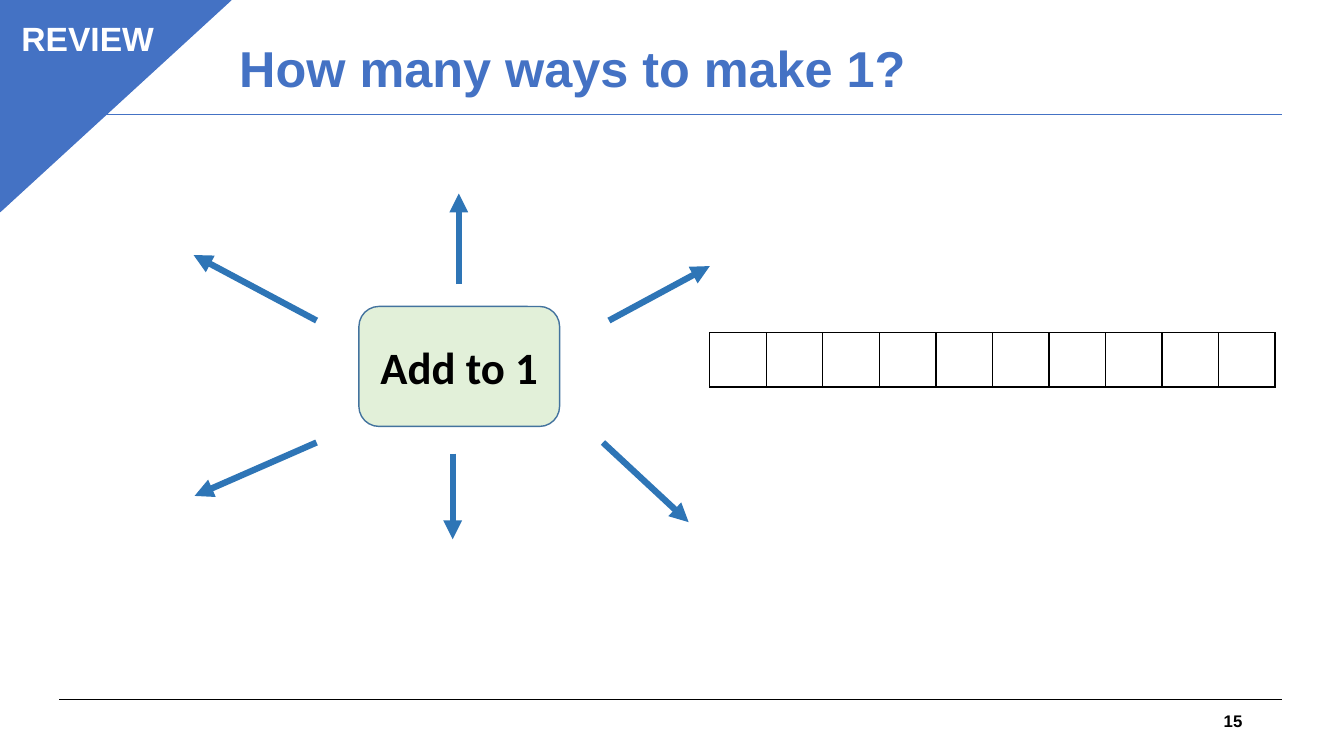
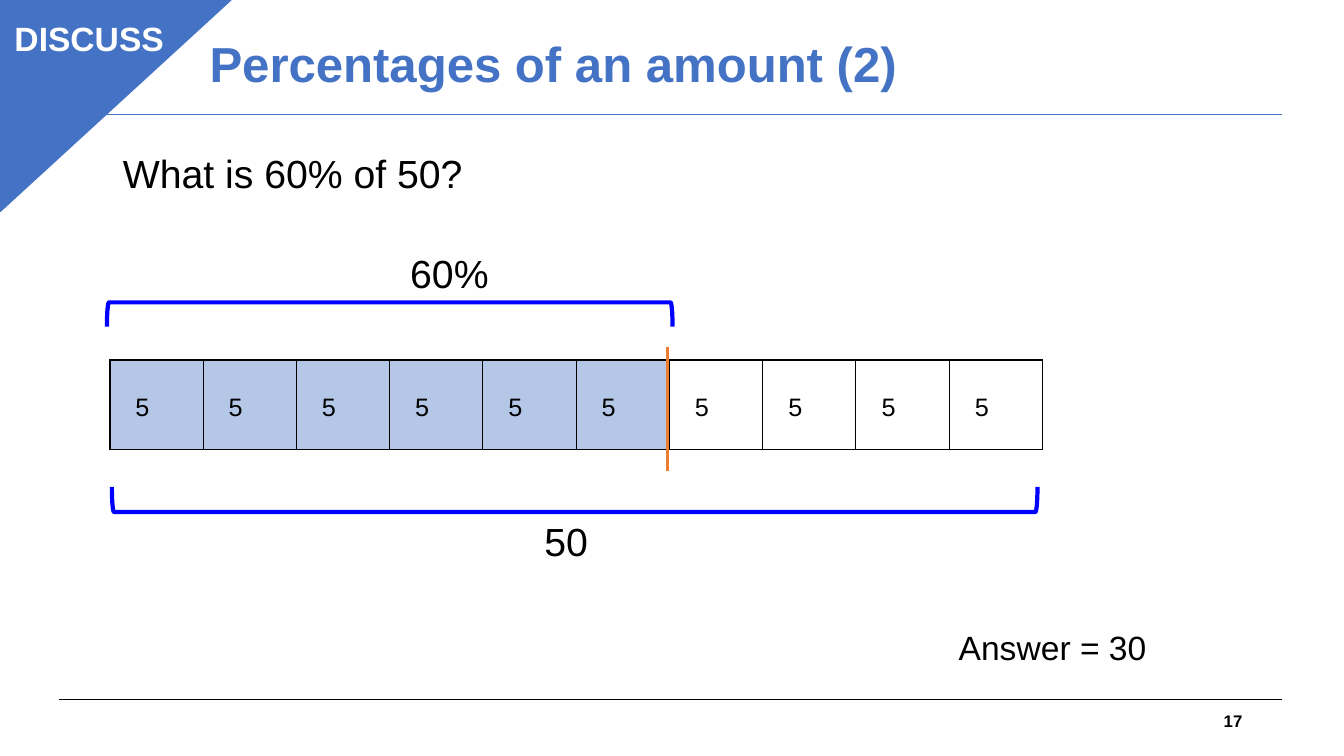
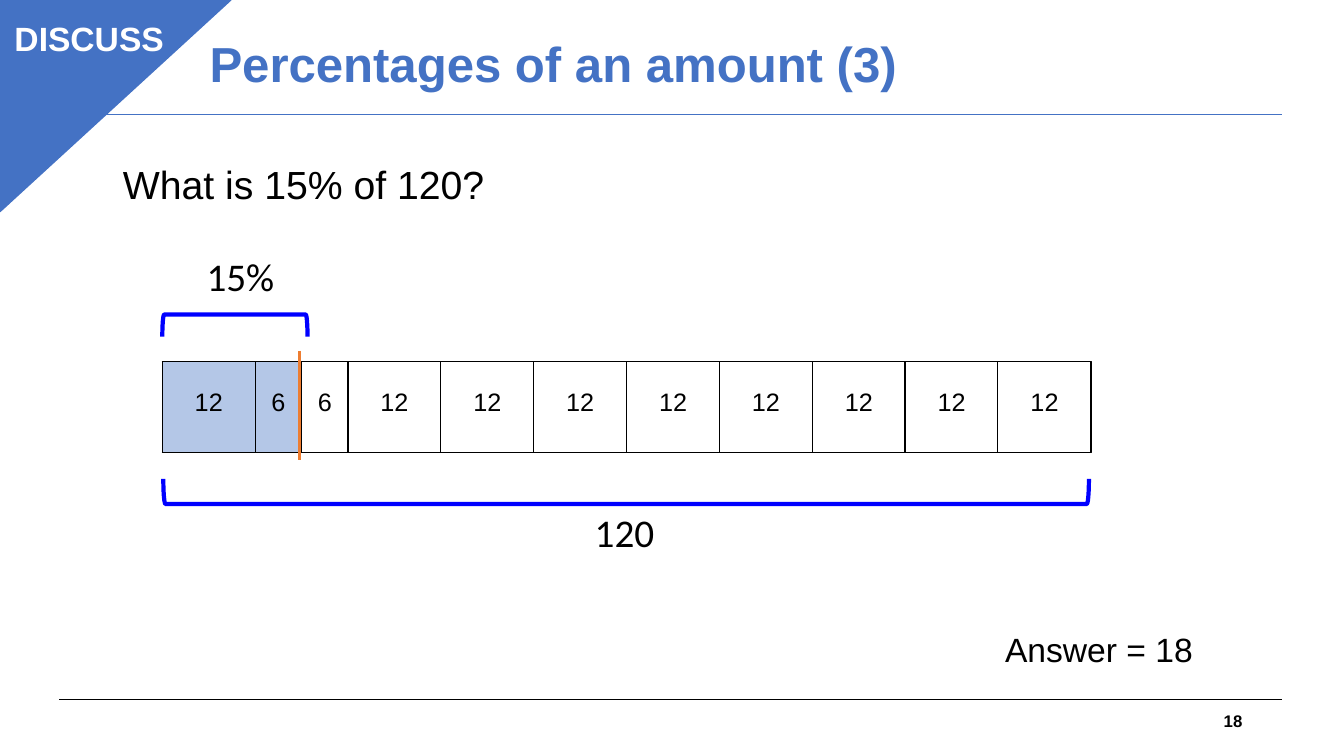
"""Build three maths slides on bar models and percentages of an amount."""
from itertools import accumulate

from lxml import etree
from pptx import Presentation
from pptx.dml.color import RGBColor
from pptx.enum.shapes import MSO_CONNECTOR, MSO_SHAPE
from pptx.enum.text import MSO_ANCHOR, PP_ALIGN
from pptx.oxml.ns import qn
from pptx.util import Inches, Pt

STRAIGHT = MSO_CONNECTOR.STRAIGHT
TRIANGLE, ROUNDED = MSO_SHAPE.ISOSCELES_TRIANGLE, MSO_SHAPE.ROUNDED_RECTANGLE
BRACKET, RECTANGLE = MSO_SHAPE.LEFT_BRACKET, MSO_SHAPE.RECTANGLE
LEFT, CENTER, RIGHT = PP_ALIGN.LEFT, PP_ALIGN.CENTER, PP_ALIGN.RIGHT
TOP, MIDDLE = MSO_ANCHOR.TOP, MSO_ANCHOR.MIDDLE

COLORS = {
    "blue": "4472C4", "arrow": "2E75B6", "card": "E2F0D9", "card_edge": "43739E",
    "shade": "B4C7E7", "bracket": "0000FF", "marker": "ED7D31",
    "black": "000000", "white": "FFFFFF",
}
TITLE = {"bold": True, "color": "blue", "anchor": MIDDLE, "spacing": 0.9}
BADGE = {"size": 24, "bold": True, "color": "white", "align": CENTER}
NUMBER = {"size": 12, "bold": True, "align": RIGHT, "anchor": MIDDLE}

WAYS = {
    "badge": ("REVIEW", (0, 0.13, 1.74, 0.5)), "number": "15",
    "title": ("How many ways to make 1?", (0.68, 0.15, 10, 1.11), 36, CENTER),
    "card": ("Add to 1", (3.56, 3.04, 1.99, 1.19)),
    "arrows": [
        ((3.14, 3.18), (1.92, 2.53)), ((4.49, 4.5), (4.49, 5.35)),
        ((3.14, 4.39), (1.93, 4.92)), ((4.55, 2.82), (4.55, 1.92)),
        ((6.04, 3.18), (7.04, 2.64)), ((5.98, 4.39), (6.83, 5.18)),
    ],
    "bar": (7.04, 3.3, 5.61, 0.54), "parts": [1] * 10,
}
DISCUSS = ("DISCUSS", (-0.1, 0.13, 1.97, 0.5))
DISCUSS_TITLE = ((1.98, 0.11, 8.11, 1.11), 35.1, LEFT)
PROBLEMS = [
    {
        "badge": DISCUSS, "number": "17",
        "title": ("Percentages of an amount (2)", *DISCUSS_TITLE),
        "question": ("What is 60% of 50?", (1.12, 1.43, 8.78, 0.57)),
        "answer": ("Answer = 30", (9.41, 6.17, 3.74, 0.5)),
        "bar": (1.09, 3.57, 9.25, 0.89), "parts": [5] * 10, "shaded": 6,
        "part_shift": -0.14, "part_top": 3.83, "marker": (3.44, 4.67),
        "share": ("60%", (3.97, 2.42, 1.85, 0.57)),
        "whole": ("50", (5.3, 5.08, 0.85, 0.57)), "font": "Arial",
        "brackets": [((1.11, 4.83, 9.18, 0.25), 270), ((1.06, 3, 5.61, 0.24), 90)],
    },
    {
        "badge": DISCUSS, "number": "18",
        "title": ("Percentages of an amount (3)", *DISCUSS_TITLE),
        "question": ("What is 15% of 120?", (1.12, 1.54, 8.78, 0.57)),
        "answer": ("Answer = 18", (9.87, 6.19, 3.74, 0.5)),
        "bar": (1.61, 3.59, 9.21, 0.9), "parts": [12, 6, 6] + [12] * 8, "shaded": 2,
        "part_shift": 0, "part_top": 3.78, "marker": (3.48, 4.56),
        "share": ("15%", (1.95, 2.45, 1.35, 0.57)),
        "whole": ("120", (5.8, 4.99, 0.85, 0.57)), "font": "Calibri",
        "brackets": [((1.62, 4.75, 9.18, 0.25), 270), ((1.61, 3.12, 1.44, 0.22), 90)],
    },
]


def rgb(name):
    return RGBColor.from_string(COLORS[name])


def write(frame, text, size=28, font="Arial", color="black", bold=False,
          align=LEFT, anchor=TOP, spacing=1.0):
    frame.word_wrap = True
    frame.vertical_anchor = anchor
    paragraph = frame.paragraphs[0]
    paragraph.alignment, paragraph.line_spacing = align, spacing
    run = paragraph.add_run()
    run.text = text
    formats = {"name": font, "size": Pt(size), "bold": bold}
    for key, value in formats.items():
        setattr(run.font, key, value)
    run.font.color.rgb = rgb(color)


def add_text(slide, text, box, **style):
    write(slide.shapes.add_textbox(*map(Inches, box)).text_frame, text, **style)


def add_shape(slide, kind, box, line, weight, fill=None):
    shape = slide.shapes.add_shape(kind, *map(Inches, box))
    shape.shadow.inherit = False
    if fill:
        shape.fill.solid()
        shape.fill.fore_color.rgb = rgb(fill)
    else:
        shape.fill.background()
    shape.line.color.rgb = rgb(line)
    shape.line.width = Pt(weight)
    return shape


def add_line(slide, start, end, color, weight, arrow=False):
    line = slide.shapes.add_connector(STRAIGHT, *map(Inches, (*start, *end)))
    line.line.color.rgb = rgb(color)
    line.line.width = Pt(weight)
    if arrow:
        etree.SubElement(line.line._get_or_add_ln(), qn("a:tailEnd"), type="triangle")
    etree.SubElement(line._element.spPr, qn("a:effectLst"))


def add_bracket(slide, span, rotation):
    left, top, width, depth = span
    box = (left + (width - depth) / 2, top + (depth - width) / 2, depth, width)
    add_shape(slide, BRACKET, box, "bracket", 3).rotation = rotation


def part_edges(bar, parts):
    left, _, width, _ = bar
    return [left + width * done / sum(parts) for done in accumulate(parts, initial=0)]


def outline_cell(cell):
    properties = cell._tc.get_or_add_tcPr()
    for position, side in enumerate(("a:lnL", "a:lnR", "a:lnT", "a:lnB")):
        border = etree.Element(qn(side), w=str(Pt(1)))
        fill = etree.SubElement(border, qn("a:solidFill"))
        etree.SubElement(fill, qn("a:srgbClr"), val=COLORS["black"])
        properties.insert(position, border)


def add_bar(slide, bar, parts, fills):
    table = slide.shapes.add_table(1, len(parts), *map(Inches, bar)).table
    table.first_row = table.horz_banding = False
    edges = part_edges(bar, parts)
    for index, fill in enumerate(fills):
        table.columns[index].width = Inches(edges[index + 1] - edges[index])
        cell = table.cell(0, index)
        if fill:
            cell.fill.solid()
            cell.fill.fore_color.rgb = rgb(fill)
        else:
            cell.fill.background()
        outline_cell(cell)


def start_slide(prs, content):
    slide = prs.slides.add_slide(prs.slide_layouts[6])
    add_line(slide, (0.59, 6.94), (12.72, 6.94), "black", 0.75)
    add_line(slide, (0.59, 1.14), (12.72, 1.14), "blue", 0.75)
    corner = add_shape(slide, TRIANGLE, (0, 0, 2.29, 2.1), "blue", 1, "blue")
    corner.adjustments[0] = 0
    corner._element.spPr.xfrm.set("flipV", "1")
    add_text(slide, *content["badge"], **BADGE)
    title, box, size, align = content["title"]
    add_text(slide, title, box, size=size, align=align, **TITLE)
    add_text(slide, content["number"], (11.93, 6.95, 0.49, 0.4), **NUMBER)
    return slide


def build_ways(prs):
    slide = start_slide(prs, WAYS)
    for start, end in WAYS["arrows"]:
        add_line(slide, start, end, "arrow", 4.5, arrow=True)
    label, box = WAYS["card"]
    card = add_shape(slide, ROUNDED, box, "card_edge", 1, "card")
    write(card.text_frame, label, size=32, font="Calibri", bold=True,
          align=CENTER, anchor=MIDDLE)
    add_bar(slide, WAYS["bar"], WAYS["parts"], ["white"] * len(WAYS["parts"]))


def build_problem(prs, problem):
    slide = start_slide(prs, problem)
    bar, parts, shaded = problem["bar"], problem["parts"], problem["shaded"]
    add_text(slide, *problem["question"])
    add_text(slide, *problem["answer"], size=24)
    for span, rotation in problem["brackets"]:
        add_bracket(slide, span, rotation)
    for amount in ("share", "whole"):
        add_text(slide, *problem[amount], font=problem["font"])
    add_bar(slide, bar, parts, ["shade"] * shaded + [None] * (len(parts) - shaded))
    add_shape(slide, RECTANGLE, bar, "black", 0.5)
    edges = part_edges(bar, parts)
    for part, left, right in zip(parts, edges, edges[1:]):
        box = (left + problem["part_shift"], problem["part_top"], right - left, 0.4)
        add_text(slide, str(part), box, size=18, align=CENTER)
    marker_x = edges[shaded] - 0.02
    top, bottom = problem["marker"]
    add_line(slide, (marker_x, top), (marker_x, bottom), "marker", 2.25)


def main():
    prs = Presentation()
    prs.slide_width, prs.slide_height = Inches(13.33), Inches(7.5)
    build_ways(prs)
    for problem in PROBLEMS:
        build_problem(prs, problem)
    prs.save("out.pptx")


if __name__ == "__main__":
    main()
